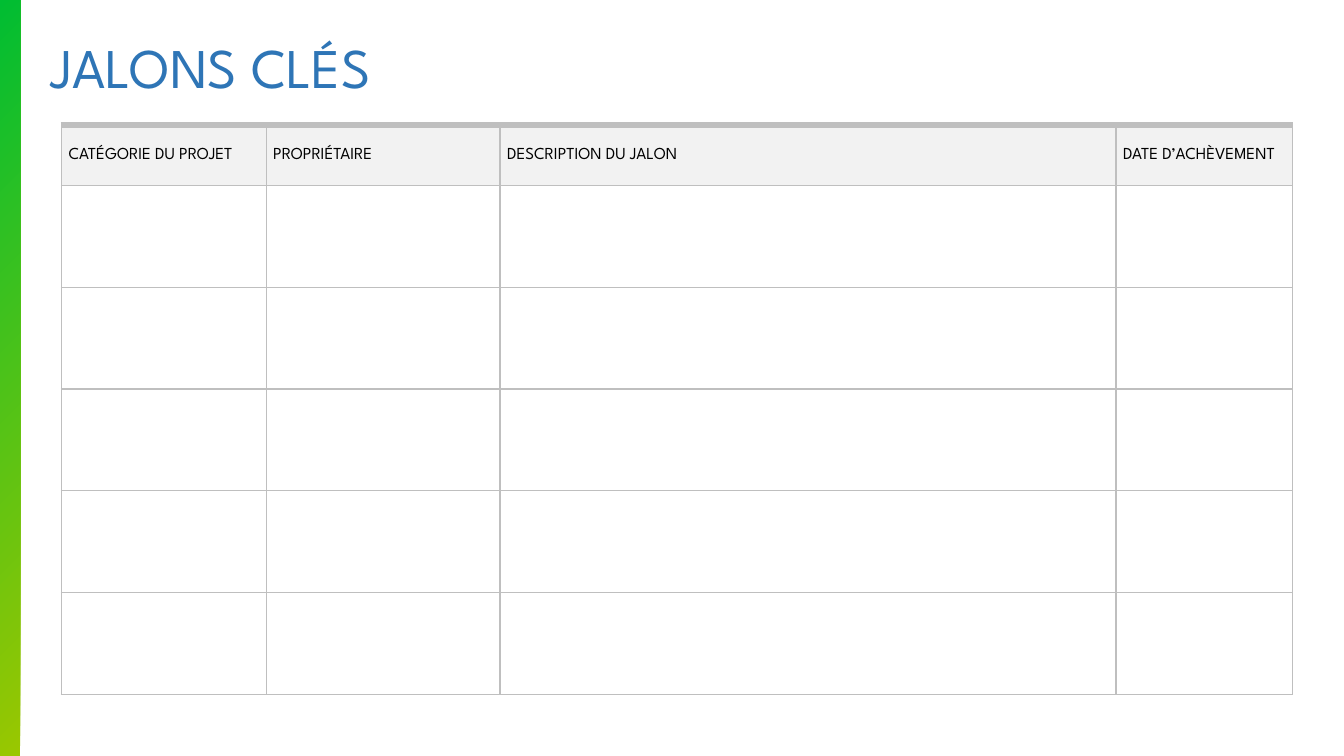
from lxml.etree import SubElement
from pptx import Presentation
from pptx.dml.color import RGBColor
from pptx.enum.shapes import MSO_SHAPE
from pptx.enum.text import MSO_ANCHOR, MSO_AUTO_SIZE, PP_ALIGN
from pptx.oxml.ns import qn
from pptx.util import Emu, Pt

PX = 9144
FONT = "League Spartan"
BLUE = RGBColor(0x2E, 0x75, 0xB6)
BLACK = RGBColor(0, 0, 0)
WHITE = RGBColor(0xFF, 0xFF, 0xFF)
LIGHT_GREY = RGBColor(0xF2, 0xF2, 0xF2)
BORDER_GREY = RGBColor(0xBF, 0xBF, 0xBF)
LIME = RGBColor(0x9A, 0xC7, 0x00)
GREEN = RGBColor(0x00, 0xBD, 0x32)

HEADERS = ["CATÉGORIE DU PROJET", "PROPRIÉTAIRE", "DESCRIPTION DU JALON", "DATE D’ACHÈVEMENT"]
COL_WIDTHS = [203, 232, 611, 175]
HEADER_HEIGHT = 60
ROW_HEIGHT = 101
MILESTONES = 5


def px(n):
    return Emu(n * PX)


def set_text(tf, text, size, color, align=PP_ALIGN.LEFT, anchor=MSO_ANCHOR.MIDDLE):
    tf.vertical_anchor = anchor
    p = tf.paragraphs[0]
    p.alignment = align
    r = p.add_run()
    r.text = text
    r.font.name = FONT
    r.font.size = Pt(size)
    r.font.color.rgb = color


def add_title(s, text, left, top, width, height):
    sp = s.shapes.title
    sp.left, sp.top, sp.width, sp.height = map(px, (left, top, width, height))
    tf = sp.text_frame
    tf.word_wrap = False
    tf.auto_size = MSO_AUTO_SIZE.SHAPE_TO_FIT_TEXT
    set_text(tf, text, size=40, color=BLUE, anchor=MSO_ANCHOR.TOP)


def add_gradient_bar(s, left, top, width, height):
    sp = s.shapes.add_shape(MSO_SHAPE.RECTANGLE, *map(px, (left, top, width, height)))
    sp.shadow.inherit = False
    sp.line.fill.background()
    sp.fill.gradient()
    sp.fill.gradient_angle = 135
    for stop, color in zip(sp.fill.gradient_stops, (LIME, GREEN)):
        stop.color.rgb = color


def set_borders(cell, top=1):
    tc_pr = cell._tc.get_or_add_tcPr()
    for side, width in (("L", 1), ("R", 1), ("T", top), ("B", 1)):
        ln = SubElement(tc_pr, qn(f"a:ln{side}"), w=str(Pt(width)))
        fill = SubElement(ln, qn("a:solidFill"))
        SubElement(fill, qn("a:srgbClr"), val=str(BORDER_GREY))


def set_fill(cell, color):
    cell.fill.solid()
    cell.fill.fore_color.rgb = color


def add_milestone_table(s, left, top):
    heights = [HEADER_HEIGHT] + [ROW_HEIGHT] * MILESTONES
    size = (left, top, sum(COL_WIDTHS), sum(heights))
    table = s.shapes.add_table(len(heights), len(COL_WIDTHS), *map(px, size)).table
    table.horz_banding = False
    for column, width in zip(table.columns, COL_WIDTHS):
        column.width = px(width)
    for row, height in zip(table.rows, heights):
        row.height = px(height)
        for cell in row.cells:
            set_borders(cell)
            set_fill(cell, WHITE)
    for cell, header in zip(table.rows[0].cells, HEADERS):
        tc_pr = cell._tc.get_or_add_tcPr()
        tc_pr.find(qn("a:lnT")).set("w", str(Pt(4.5)))
        set_fill(cell, LIGHT_GREY)
        cell.margin_left = cell.margin_right = px(7)
        cell.margin_top = cell.margin_bottom = 0
        cell.vertical_anchor = MSO_ANCHOR.MIDDLE
        set_text(cell.text_frame, header, size=12, color=BLACK, anchor=None)


def main():
    prs = Presentation()
    prs.slide_width, prs.slide_height = px(1333), px(750)
    s = prs.slides.add_slide(prs.slide_layouts[5])
    add_title(s, "JALONS CLÉS", 40, 27, 453, 77)
    add_gradient_bar(s, 0, 0, 20, 750)
    add_milestone_table(s, 61, 124)
    prs.save("out.pptx")


if __name__ == "__main__":
    main()
